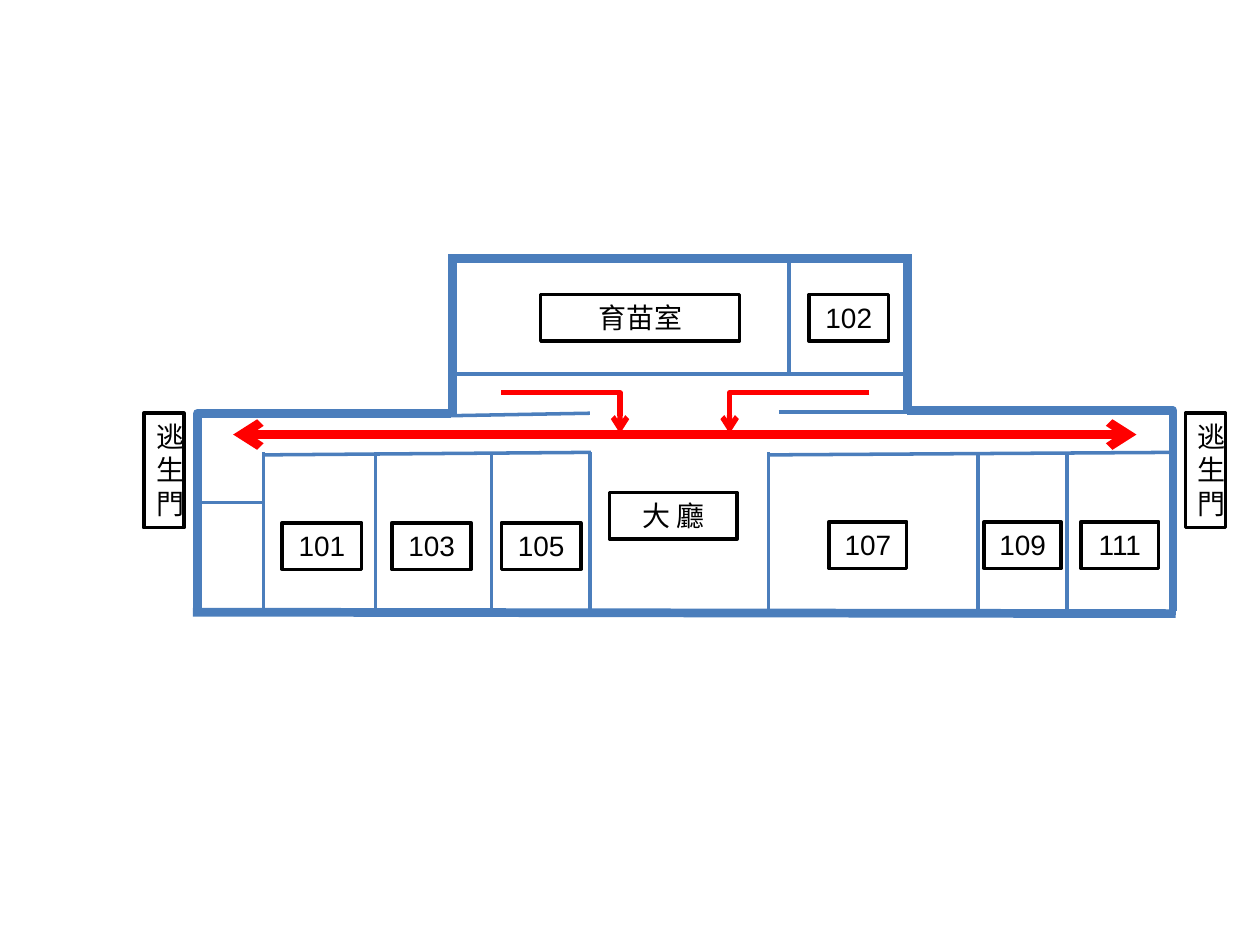
import pptx
import pptx.util
import pptx.dml.color
import pptx.enum.shapes
import pptx.enum.text
import pptx.oxml
import pptx.oxml.ns
from pptx.util import Cm

WALL, ROUTE, INK = "4B7EBC", "FF0000", "000000"
LATIN, CHINESE = "Arial", "Noto Sans CJK SC"
OUTER, INNER = 5, 2
FLOOR, CORRIDOR = 12.34, 9.12

# Outer walls as x1, y1, x2, y2
OUTER_WALLS = [
    (9.12, 8.41, 9.12, 5.13),
    (9.07, 5.21, 18.34, 5.21),
    (18.29, 8.33, 18.29, 5.13),
    (3.89, 12.34, 23.7, 12.37),
]
# Room partitions that run from the floor wall up to the corridor
PARTITION_XS = [5.31, 7.57, 9.91, 11.89, 15.49, 19.71, 21.51]
# Other inner walls
INNER_WALLS = [
    (5.31, 9.17, 11.91, 9.12),
    (15.49, 9.17, 23.7, 9.12),
    (3.91, 10.13, 5.31, 10.13),
    (9.09, 7.54, 18.29, 7.54),
    (15.9, 7.52, 15.9, 5.13),
    (9.09, 8.38, 11.89, 8.33),
    (15.7, 8.31, 18.49, 8.31),
]
# Room labels as text, left, top, width
LABELS = [(str(101 + 2 * i), 5.69 + 2.21 * i, 10.54, 1.6) for i in range(3)] + [
    ("育苗室", 10.9, 5.94, 4.01),
    ("102", 16.31, 5.94, 1.6),
    ("107", 16.71, 10.52, 1.57),
    ("109", 19.84, 10.52, 1.55),
    ("111", 21.79, 10.52, 1.57),
    ("大 廳", 12.29, 9.93, 2.57),
]
GATE_XS = [2.9, 23.9]


def color(value):
    return pptx.dml.color.RGBColor.from_string(value)


def apply_format(target, values):
    for name, value in values.items():
        setattr(target, name, value)


def add_child(parent, tag, **attributes):
    child = pptx.oxml.parse_xml(f"<a:{tag} {pptx.oxml.ns.nsdecls('a')}/>")
    for name, value in attributes.items():
        child.set(name, value)
    parent.append(child)
    return child


def style_line(line, value, width):
    line.color.rgb = color(value)
    line.width = pptx.util.Pt(width)


def add_line(page, ends, value, width, bend=None, arrows=()):
    """Draw a straight line, or an elbow that turns at the share `bend`."""
    kinds = pptx.enum.shapes.MSO_CONNECTOR
    kind = kinds.STRAIGHT if bend is None else kinds.ELBOW
    connector = page.shapes.add_connector(kind, *[Cm(end) for end in ends])
    style_line(connector.line, value, width)
    properties = connector._element.spPr
    if bend is not None:
        guides = properties.find(".//" + pptx.oxml.ns.qn("a:avLst"))
        add_child(guides, "gd", name="adj1", fmla=f"val {round(bend * 100000)}")
    outline = connector.line._get_or_add_ln()
    for end in arrows:
        add_child(outline, end, type="arrow")
    add_child(properties, "effectLst")


def add_label(page, text, left, top, width, height=0.94):
    box = page.shapes.add_textbox(Cm(left), Cm(top), Cm(width), Cm(height))
    style_line(box.line, INK, 2)
    apply_format(box.text_frame, {
        "word_wrap": True,
        "auto_size": pptx.enum.text.MSO_AUTO_SIZE.SHAPE_TO_FIT_TEXT,
    })
    para = box.text_frame.paragraphs[0]
    para.alignment = pptx.enum.text.PP_ALIGN.CENTER
    span = para.add_run()
    span.text = text
    font = LATIN if text.isascii() else CHINESE
    apply_format(span.font, {"size": pptx.util.Pt(16), "name": font})
    span.font.color.rgb = color(INK)
    add_child(span.font._element, "ea", typeface=font)


def main():
    deck = pptx.Presentation()
    apply_format(deck, {"slide_width": Cm(25.4), "slide_height": Cm(19.05)})
    page = deck.slides.add_slide(deck.slide_layouts[6])

    # Building outline, with the two wings as elbows
    add_line(page, (9.09, 8.33, 3.89, 12.34), WALL, OUTER, bend=0.982)
    for ends in OUTER_WALLS:
        add_line(page, ends, WALL, OUTER)
    add_line(page, (23.7, 12.32, 18.29, 8.28), WALL, OUTER, bend=0.01)

    # Inner walls
    for x in PARTITION_XS:
        add_line(page, (x, FLOOR, x, CORRIDOR), WALL, INNER)
    for ends in INNER_WALLS:
        add_line(page, ends, WALL, INNER)

    # Escape routes
    add_line(page, (4.7, 8.76, 22.91, 8.76), ROUTE, 5,
             arrows=("headEnd", "tailEnd"))
    for start, end in [(10.11, 12.5), (17.53, 14.71)]:
        add_line(page, (start, 7.92, end, 8.74), ROUTE, 3, bend=1,
                 arrows=("tailEnd",))

    # Room labels and escape doors
    for label in LABELS:
        add_label(page, *label)
    for left in GATE_XS:
        add_label(page, "逃生門", left, 8.33, 0.81, 2.31)

    deck.save("out.pptx")


if __name__ == "__main__":
    main()
